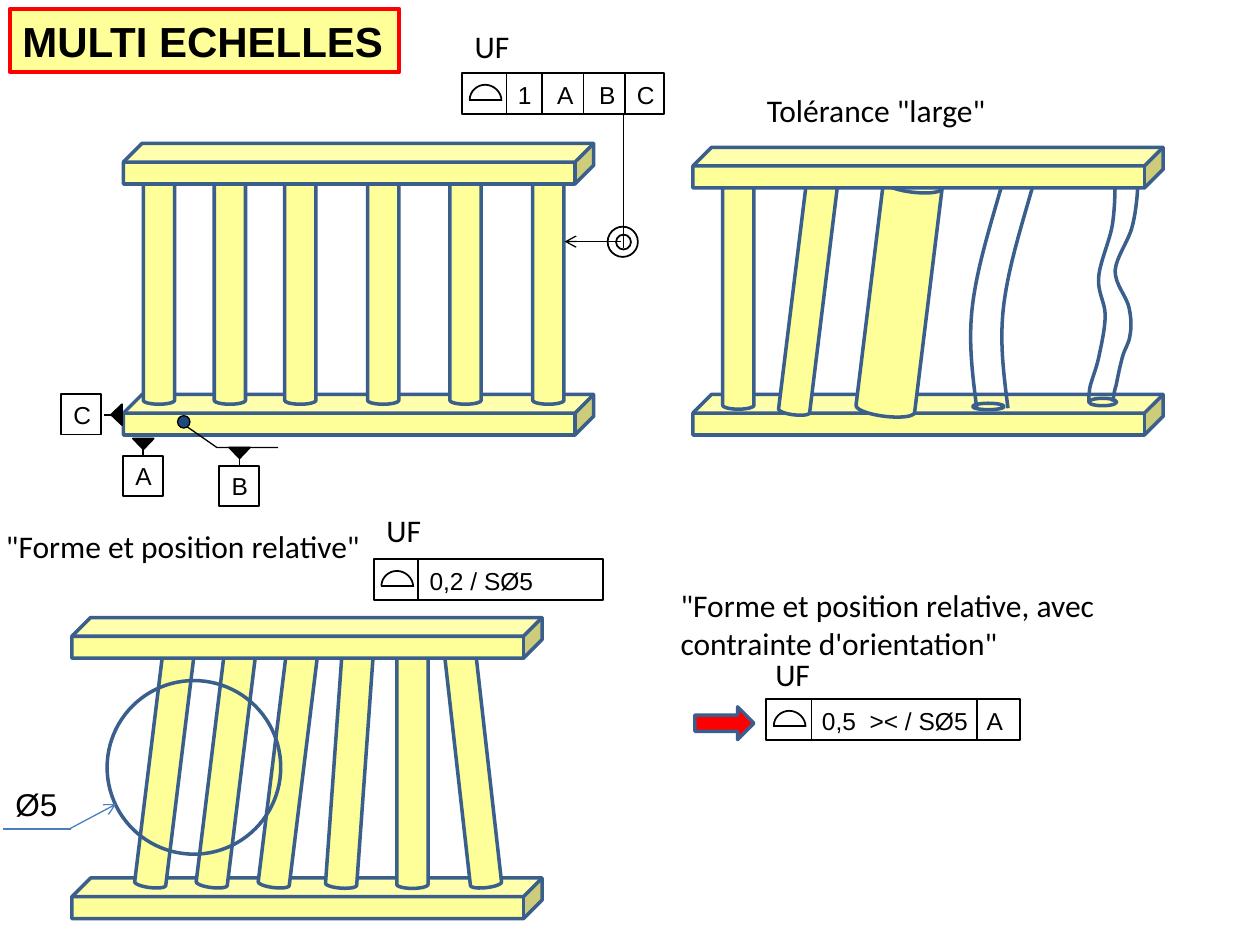
"""Build the slide on multi-scale tolerances of a ladder barrier."""
from lxml.etree import SubElement
from pptx import Presentation
from pptx.dml.color import RGBColor
from pptx.enum.shapes import MSO_CONNECTOR, MSO_SHAPE
from pptx.oxml.ns import qn
from pptx.util import Cm, Pt

HEX = {"wood": "FFFF99", "edge": "3A5F8C", "ink": "000000", "red": "FF0000",
       "dot": "1F497D", "lead": "4B7EBC"}
FONTS = {
    "title": {"name": "Arial", "size": Pt(24), "bold": True},
    "frame": {"name": "Arial", "size": Pt(14)},
    "size": {"name": "Arial", "size": Pt(18)},
    "note": {"name": "Calibri", "size": Pt(18)},
}
INSETS = {"margin_left": Cm(0.25), "margin_right": 0,
          "margin_top": Cm(0.13), "margin_bottom": Cm(0.13), "word_wrap": True}

BEAM = (9.48, 0.82)
BAR = (0.63, 4.85)
LADDERS = [
    {"left": 2.49, "top": 2.89, "base": 7.95,
     "bars": [(x, 3.3, BAR[0], 0) for x in (2.89, 4.32, 5.74, 7.41, 9.07, 10.74)]},
    {"left": 13.97, "top": 2.97, "base": 7.95,
     "bars": [(14.57, 3.4, BAR[0], 0), (15.98, 3.53, BAR[0], 7), (17.53, 3.56, 1.19, 7)]},
    {"left": 1.45, "top": 12.45, "base": 17.7,
     "bars": [(x, 13.06, BAR[0], turn) for x, turn in
              ((3, 7), (4.24, 7), (5.49, 7), (6.73, 4.1), (8, 0), (9.22, -6.4))]},
]
BENT = [(20.24, 3.58), (19.99, 4.47), (19.71, 5.33), (19.61, 6.12),
        (19.51, 6.88), (19.61, 7.57), (19.69, 8.23)]
WAVES = [
    [(22.48, 3.48), (22.48, 3.81), (22.48, 4.14), (22.43, 4.5),
     (22.38, 4.85), (22.17, 5.28), (22.15, 5.59), (22.12, 5.89), (22.28, 6.1), (22.28, 6.35),
     (22.28, 6.63), (22.2, 6.96), (22.15, 7.21), (22.1, 7.44), (22, 7.67), (21.97, 7.82),
     (21.95, 7.98), (21.95, 8.05), (21.95, 8.1)],
    [(22.94, 3.48), (22.96, 3.45), (22.96, 3.45), (22.94, 3.63),
     (22.94, 3.81), (22.91, 4.24), (22.83, 4.55), (22.76, 4.85), (22.5, 5.18), (22.48, 5.46),
     (22.48, 5.74), (22.71, 5.97), (22.76, 6.2), (22.81, 6.43), (22.81, 6.6), (22.78, 6.76),
     (22.76, 6.93), (22.68, 7.01), (22.63, 7.19), (22.58, 7.37), (22.53, 7.62), (22.5, 7.77),
     (22.45, 7.92), (22.45, 8.03), (22.43, 8.1)],
]
ENDS = [(20.24, 3.48, 0.63, 0.13), (19.61, 8.13, 0.63, 0.13),
        (21.95, 8.03, 0.56, 0.15), (22.43, 3.38, 0.56, 0.15)]
DOME = [(0, 0.3), (0, 0.13), (0.15, 0), (0.31, 0), (0.49, 0), (0.64, 0.15), (0.64, 0.32)]
FRAMES = [
    (9.32, 1.47, 4.06, [0.89, 1.6, 2.44, 3.28], "1\tA\tB\tC", [0.79, 1.64, 2.4]),
    (7.54, 11.27, 4.62, [0.89], "0,2 / SØ5", []),
    (15.45, 14.09, 5.11, [0.91, 4.24], "0,5\t>< / SØ5\tA", [0.96, 3.32]),
]
DATUMS = [("A", 2.89, 8.84, 0, 1, 0.76), ("B", 4.83, 9.02, 0, 1, 0.78),
          ("C", 2.46, 8.36, -1, 0, 0.82)]
RINGS = [
    (12.25, 4.57, 0.61, None, "ink", 1),
    (12.42, 4.73, 0.3, None, "ink", 1),
    (3.58, 8.38, 0.25, "dot", "ink", 0.75),
    (2.16, 13.72, 3.5, None, "edge", 2),
]
LEADS = [
    (12.52, 4.87, 11.38, 4.87, "ink", True),
    (12.57, 5, 12.57, 2.29, "ink", False),
    (1.4, 16.71, 2.34, 16.21, "lead", True),
    (1.44, 16.71, 0.06, 16.71, "lead", False),
]
NOTES = [
    (9.32, 0.41, 1.22, 1.02, "UF", "note"),
    (7.54, 10.17, 1.22, 1.02, "UF", "note"),
    (15.38, 13.07, 1.22, 1.02, "UF", "note"),
    (15.21, 1.7, 4.98, 1.02, 'Tolérance "large"', "note"),
    (-0.13, 10.49, 7.75, 1.02, '"Forme et position relative"', "note"),
    (13.47, 11.68, 9.27, 1.8,
     '"Forme et position relative, avec contrainte d\'orientation"', "note"),
    (0.06, 15.7, 1.37, 1.02, "Ø5", "size"),
]

deck = Presentation()
deck.slide_width, deck.slide_height = Cm(25.4), Cm(19.05)
slide = deck.slides.add_slide(deck.slide_layouts[6])
shapes = slide.shapes


def tint(name):
    return RGBColor.from_string(HEX[name])


def paint(item, fill, edge, width):
    item.shadow.inherit = False
    if fill:
        item.fill.solid()
        item.fill.fore_color.rgb = tint(fill)
    else:
        item.fill.background()
    item.line.color.rgb = tint(edge)
    item.line.width = Pt(width)
    return item


def solid(kind, box, fill, edge, width):
    return paint(shapes.add_shape(kind, *map(Cm, box)), fill, edge, width)


def stroke(x1, y1, x2, y2, edge="ink", width=1, arrow=False):
    line = shapes.add_connector(MSO_CONNECTOR.STRAIGHT, *map(Cm, (x1, y1, x2, y2)))
    line.line.color.rgb = tint(edge)
    line.line.width = Pt(width)
    if arrow:
        SubElement(line.line._get_or_add_ln(), qn("a:tailEnd"), type="arrow")
    SubElement(line.element.spPr, qn("a:effectLst"))


def outline(dots, fill, edge, width, close=False):
    first, *rest = [(Cm(x), Cm(y)) for x, y in dots]
    pen = shapes.build_freeform(*first, scale=1.0)
    pen.add_line_segments(rest, close=close)
    return paint(pen.convert_to_shape(), fill, edge, width)


def bend(knots, edge, width):
    item = outline(knots, None, edge, width)
    track = next(item.element.iter(qn("a:path")))
    legs = track.findall(qn("a:lnTo"))
    for i in range(0, len(legs), 3):
        curve = SubElement(track, qn("a:cubicBezTo"))
        for leg in legs[i:i + 3]:
            curve.append(leg[0])
            track.remove(leg)


def shift(dots, dx, dy):
    return [(x + dx, y + dy) for x, y in dots]


def write(item, text, style, tabs=()):
    frame = item.text_frame
    for key, value in INSETS.items():
        setattr(frame, key, value)
    line = frame.paragraphs[0]
    run = line.add_run()
    run.text = text
    run.font.color.rgb = tint("ink")
    for key, value in FONTS[style].items():
        setattr(run.font, key, value)
    props = line._p.get_or_add_pPr()
    props.set("algn", "l")
    if tabs:
        stops = SubElement(props, qn("a:tabLst"))
        for tab in tabs:
            SubElement(stops, qn("a:tab"), pos=str(Cm(tab)), algn="l")


def label(x, y, w, h, text, style, tabs=()):
    write(shapes.add_textbox(*map(Cm, (x, y, w, h))), text, style, tabs)


def beam(x, y):
    solid(MSO_SHAPE.CUBE, (x, y, *BEAM), "wood", "edge", 2).adjustments[0] = 0.46


for ladder in LADDERS:
    beam(ladder["left"], ladder["base"])
    for x, y, wide, turn in ladder["bars"]:
        solid(MSO_SHAPE.CAN, (x, y, wide, BAR[1]), "wood", "edge", 2).rotation = turn
for curve in (*WAVES, BENT, shift(BENT, BAR[0], 0)):
    bend(curve, "edge", 2)
for end in ENDS:
    solid(MSO_SHAPE.OVAL, end, None, "edge", 2)
for ladder in LADDERS:
    beam(ladder["left"], ladder["top"])

for x, y, wide, cuts, text, tabs in FRAMES:
    solid(MSO_SHAPE.RECTANGLE, (x, y, wide, 0.83), None, "ink", 1)
    for cut in cuts:
        stroke(x + cut, y, x + cut, y + 0.83)
    bend(shift(DOME, x + 0.15, y + 0.24), "ink", 1)
    stroke(x + 0.14, y + 0.55, x + 0.8, y + 0.55)
    label(x + 0.87, y + 0.01, wide - 0.78, 0.86, text, "frame", tabs)

for name, x, y, dx, dy, reach in DATUMS:
    left, top = x + reach * dx - 0.41, y + reach * dy - 0.41
    solid(MSO_SHAPE.RECTANGLE, (left, top, 0.81, 0.81), None, "ink", 1)
    stroke(x + 0.36 * dx, y + 0.36 * dy, x + 0.06 * dx, y + 0.06 * dy)
    outline([(x - 0.21 * dy, y - 0.21 * dx), (x + 0.21 * dy, y + 0.21 * dx),
             (x + 0.22 * dx, y + 0.22 * dy)], "ink", "ink", 1, close=True)
    label(left, top - 0.02, 0.88, 0.86, name, "frame")
outline([(5.61, 9.02), (4.37, 9.02), (3.71, 8.56)], None, "ink", 0.75)

for x, y, side, fill, edge, width in RINGS:
    solid(MSO_SHAPE.OVAL, (x, y, side, side), fill, edge, width)
for x1, y1, x2, y2, edge, arrow in LEADS:
    stroke(x1, y1, x2, y2, edge, 0.75, arrow)
solid(MSO_SHAPE.RIGHT_ARROW, (14.01, 14.25, 1.19, 0.66), "red", "edge", 2)
for note in NOTES:
    label(*note)
write(solid(MSO_SHAPE.RECTANGLE, (0.2, 0.18, 7.85, 1.28), "wood", "red", 2.25),
      "MULTI ECHELLES", "title")

deck.save("out.pptx")
